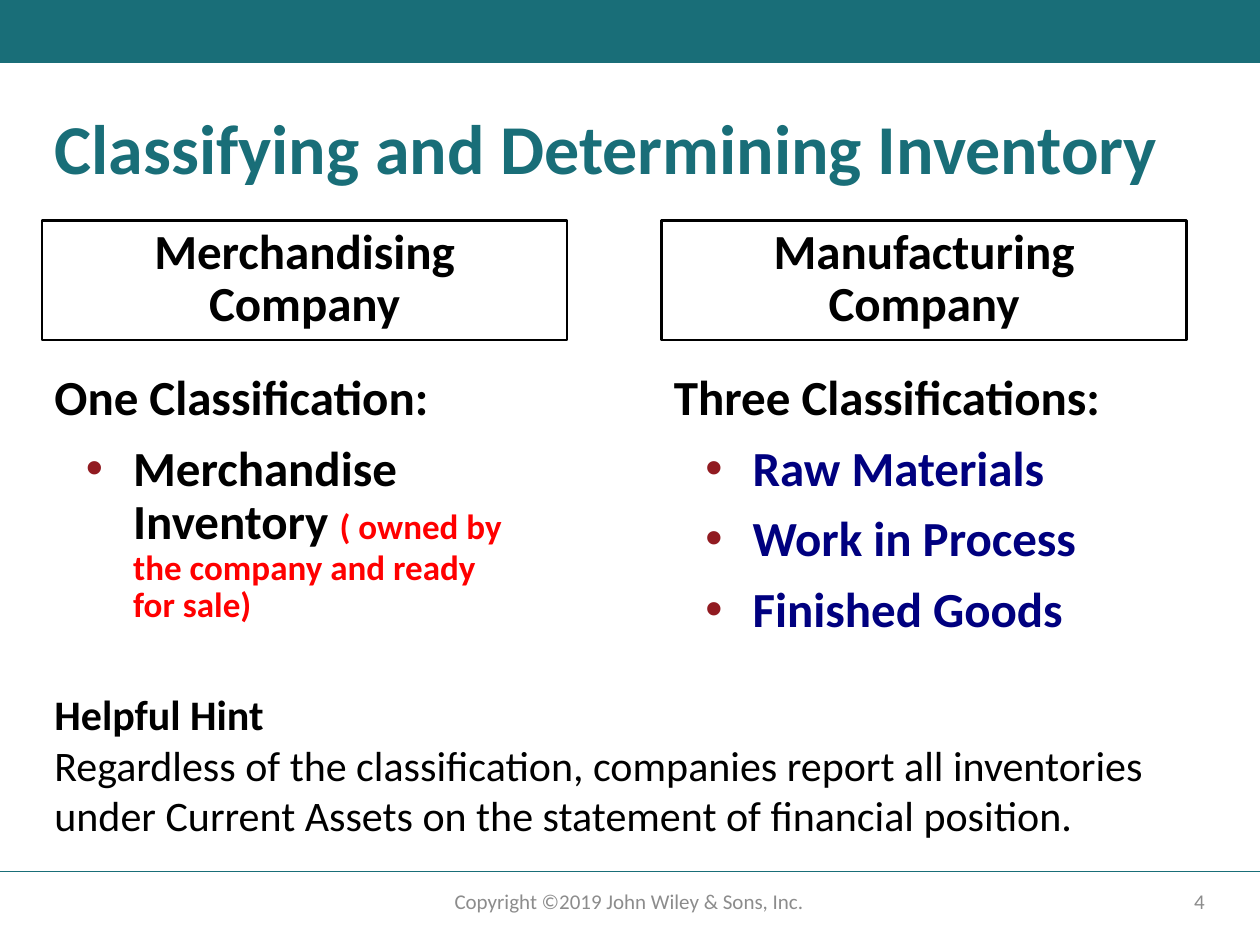
from pptx import Presentation
from pptx.util import Pt
from pptx.dml.color import RGBColor
from pptx.enum.shapes import MSO_SHAPE, MSO_CONNECTOR
from pptx.enum.text import PP_ALIGN, MSO_ANCHOR
from pptx.oxml.ns import qn
from lxml.etree import SubElement

TEAL, BLACK, RED, NAVY, GREY = "196E78", "000000", "FF0000", "00007F", "8C8C8C"


def rgb(code):
    return RGBColor.from_string(code)


def add_text(frame, paras, space=0, line=1.0, align=PP_ALIGN.LEFT):
    """Each paragraph is (bulleted, runs); each run is (text, size, colour, bold)."""
    frame.word_wrap = True
    for i, (dot, runs) in enumerate(paras):
        para = frame.add_paragraph() if i else frame.paragraphs[0]
        para.alignment, para.line_spacing = align, line
        if i:
            para.space_before = Pt(space)
        if dot:
            props = para._p.get_or_add_pPr()
            props.set("marL", str(Pt(45)))
            props.set("indent", str(Pt(-27)))
            tint = SubElement(props, qn("a:buClr"))
            SubElement(tint, qn("a:srgbClr"), val="911B21")
            SubElement(props, qn("a:buFont"), typeface="Arial")
            SubElement(props, qn("a:buChar"), char="•")
        for text, size, color, bold in runs:
            run = para.add_run()
            run.text = text
            font = run.font
            font.name, font.size, font.bold = "Calibri", Pt(size), bold
            font.color.rgb = rgb(color)


deck = Presentation()
deck.slide_width, deck.slide_height = Pt(720), Pt(540)
slide = deck.slides.add_slide(deck.slide_layouts[5])
shapes = slide.shapes

# Top band
band = shapes.add_shape(MSO_SHAPE.RECTANGLE, 0, 0, Pt(720), Pt(36))
band.shadow.inherit = False
band.fill.solid()
band.fill.fore_color.rgb = rgb(TEAL)
band.line.fill.background()

# Footer rule
rule = shapes.add_connector(MSO_CONNECTOR.STRAIGHT, 0, Pt(498), Pt(720), Pt(498))
rule.line.color.rgb = rgb(TEAL)
rule.line.width = Pt(1)
SubElement(rule._element.spPr, qn("a:effectLst"))

# Title
title = shapes.title
title.left, title.top, title.width, title.height = Pt(24), Pt(60), Pt(684), Pt(54)
title.text_frame.vertical_anchor = MSO_ANCHOR.MIDDLE
add_text(title.text_frame,
         [(False, [("Classifying and Determining Inventory", 40, TEAL, True)])], line=0.9)

# Two company columns: left edge, heading, list height, list
columns = [
    (24, "Merchandising Company", 153, [
        (False, [("One Classification:", 28, BLACK, True)]),
        (True, [("Merchandise Inventory ", 28, BLACK, True),
                ("( owned by the company and ready for sale)", 20, RED, True)]),
    ]),
    (378, "Manufacturing Company", 174, [
        (False, [("Three Classifications:", 28, BLACK, True)]),
        *[(True, [(name, 28, NAVY, True)])
          for name in ("Raw Materials", "Work in Process", "Finished Goods")],
    ]),
]
for left, name, tall, items in columns:
    head = shapes.add_shape(MSO_SHAPE.RECTANGLE, Pt(left), Pt(126), Pt(300), Pt(68.4))
    head.shadow.inherit = False
    head.fill.background()
    head.line.color.rgb = rgb(BLACK)
    head.line.width = Pt(1.5)
    frame = head.text_frame
    frame.vertical_anchor = MSO_ANCHOR.TOP
    frame.margin_left = frame.margin_right = Pt(10)
    add_text(frame, [(False, [(name, 28, BLACK, True)])], line=0.9, align=PP_ALIGN.CENTER)

    body = shapes.add_textbox(Pt(left), Pt(210), Pt(276), Pt(tall))
    add_text(body.text_frame, items, space=10, line=0.9)

# Hint
hint = shapes.add_textbox(Pt(24), Pt(390), Pt(672), Pt(84))
add_text(hint.text_frame, [
    (False, [("Helpful Hint", 24, BLACK, True)]),
    (False, [("Regardless of the classification, companies report all inventories "
              "under Current Assets on the statement of financial position.",
              24, BLACK, False)]),
])

# Footer
for left, wide, text, align in (
    (508, 187.5, "4", PP_ALIGN.RIGHT),
    (238, 243, "Copyright ©2019 John Wiley & Sons, Inc.", PP_ALIGN.CENTER),
):
    foot = shapes.add_textbox(Pt(left), Pt(500.5), Pt(wide), Pt(28.8))
    foot.text_frame.vertical_anchor = MSO_ANCHOR.MIDDLE
    add_text(foot.text_frame, [(False, [(text, 12, GREY, False)])], align=align)

deck.save("out.pptx")
